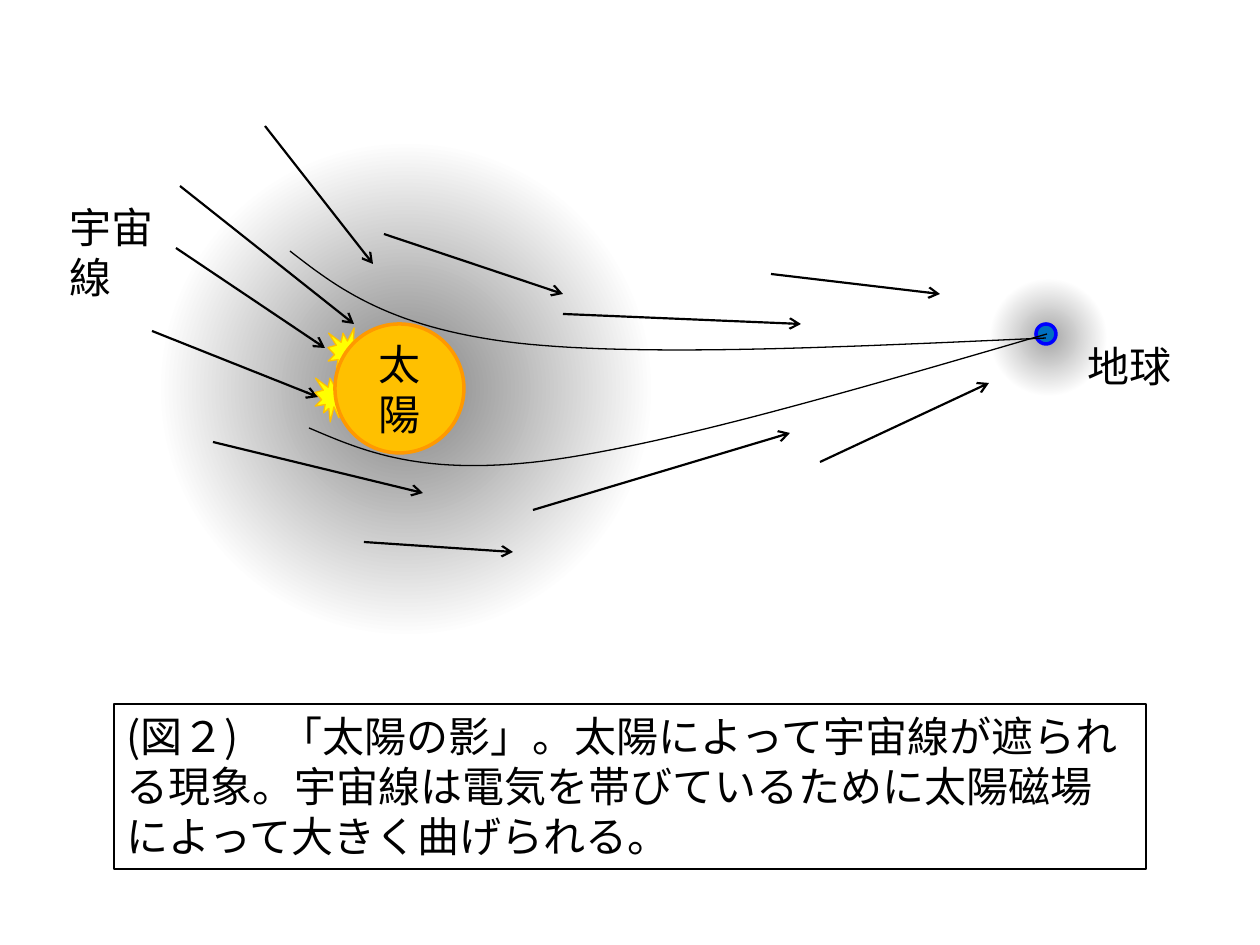
import pptx
import pptx.util
import pptx.dml.color
import pptx.enum.shapes
import pptx.enum.text
import pptx.oxml
import pptx.oxml.ns

PX = 914400 / 126
FONT = "Noto Sans CJK JP"
SHAPE = pptx.enum.shapes.MSO_SHAPE
COLORS = {
    "ink": "000000", "white": "FFFFFF",
    "earth": "0070C0", "earth_rim": "0000FF",
    "sun": "FFC000", "sun_rim": "FF9900",
    "burst": "FFFF00", "burst_rim": "FFC000",
    "earth_glow": "A6A6A6", "sun_glow": "808080",
}

# Boxes are left, top, width, height
GLOWS = [((987, 236, 123, 203), "earth_glow"), ((54, 37, 704, 704), "sun_glow")]
EARTH = (1036, 324, 20, 20)
SUN = (335, 324, 129, 129)
BURSTS = [(328, 328, 39, 49), (315, 373, 39, 49)]
# Start point, then two control points and an end point for each cubic segment
PATHS = [
    [(290, 251), (340, 290), (391, 328), (517, 343),
     (643, 357), (844, 347), (1046, 338)],
    [(309, 428), (365, 452), (422, 476), (544, 461),
     (668, 445), (858, 389), (1047, 334)],
]
ARROWS = [
    ((180, 186), (354, 324)), ((152, 331), (318, 397)),
    ((213, 442), (423, 493)), ((265, 126), (373, 264)),
    ((533, 510), (790, 433)), ((563, 314), (801, 324)),
    ((176, 248), (325, 348)), ((364, 542), (513, 552)),
    ((384, 234), (563, 294)), ((820, 462), (989, 383)),
    ((771, 274), (940, 294)),
]
# Text, box, right inset
LABELS = [("地球", (1075, 334, 111, 63), 13), ("宇宙線", (57, 195, 152, 63), 45)]
CAPTION = ("(図２)　「太陽の影」。太陽によって宇宙線が遮られる現象。"
           "宇宙線は電気を帯びているために太陽磁場によって大きく曲げられる。")
CAPTION_BOX = (114, 704, 1032, 165)


def emu(*values):
    return [pptx.util.Emu(round(v * PX)) for v in values]


def rgb(name):
    return pptx.dml.color.RGBColor.from_string(COLORS[name])


def xml(tag, body="", attrs=""):
    ns = pptx.oxml.ns.nsdecls("a")
    return pptx.oxml.parse_xml(f"<a:{tag} {ns} {attrs}>{body}</a:{tag}>")


def paint(sp, fill=None, line=None, width=0.75):
    sp.shadow.inherit = False
    if fill:
        sp.fill.solid()
        sp.fill.fore_color.rgb = rgb(fill)
    else:
        sp.fill.background()
    if line:
        sp.line.color.rgb = rgb(line)
        sp.line.width = pptx.util.Pt(width)
    else:
        sp.line.fill.background()


def add_shape(s, kind, box, fill=None, line=None, width=0.75):
    sp = s.shapes.add_shape(kind, *emu(*box))
    paint(sp, fill, line, width)
    return sp


def add_glow(s, box, color):
    sp = add_shape(s, SHAPE.OVAL, box, color)
    stops = "".join(
        f'<a:gs pos="{pos}"><a:srgbClr val="{COLORS[name]}"/></a:gs>'
        for pos, name in [(0, color), (50000, "white"), (100000, "white")])
    grad = xml("gradFill", f'<a:gsLst>{stops}</a:gsLst><a:path path="circle">'
               '<a:fillToRect l="50000" t="50000" r="50000" b="50000"/></a:path>')
    solid = sp._element.spPr.find(pptx.oxml.ns.qn("a:solidFill"))
    solid.getparent().replace(solid, grad)


def bezier(points, steps=30):
    """Points along a chain of cubic segments, after the first point."""
    for i in range(0, len(points) - 1, 3):
        segment = points[i:i + 4]
        for k in range(1, steps + 1):
            t = k / steps
            weights = ((1 - t) ** 3, 3 * t * (1 - t) ** 2, 3 * t * t * (1 - t), t ** 3)
            yield emu(*(sum(w * p[axis] for w, p in zip(weights, segment))
                        for axis in (0, 1)))


def add_path(s, points):
    builder = s.shapes.build_freeform(*emu(*points[0]))
    builder.add_line_segments(list(bezier(points)), close=False)
    paint(builder.convert_to_shape(), line="ink")


def add_arrow(s, start, end):
    straight = pptx.enum.shapes.MSO_CONNECTOR.STRAIGHT
    line = s.shapes.add_connector(straight, *emu(*start, *end))
    line.line.color.rgb = rgb("ink")
    line.line.width = pptx.util.Pt(1.25)
    line.line._get_or_add_ln().append(xml("tailEnd", attrs='type="arrow"'))
    line._element.spPr.append(xml("effectLst"))


def set_text(sp, text, align, anchor):
    tf = sp.text_frame
    tf.word_wrap = True
    tf.vertical_anchor = anchor
    tf.text = text
    p = tf.paragraphs[0]
    p.alignment = align
    r = p.runs[0]
    r.font.size = pptx.util.Pt(24)
    r.font.name = FONT
    r.font.color.rgb = rgb("ink")
    r._r.get_or_add_rPr().append(xml("ea", attrs=f'typeface="{FONT}"'))


def main():
    prs = pptx.Presentation()
    prs.slide_width, prs.slide_height = emu(1260, 945)
    s = prs.slides.add_slide(prs.slide_layouts[6])
    align, anchor = pptx.enum.text.PP_ALIGN, pptx.enum.text.MSO_ANCHOR

    for box, color in GLOWS:
        add_glow(s, box, color)
    add_shape(s, SHAPE.OVAL, EARTH, "earth", "earth_rim", 2)
    for points in PATHS:
        add_path(s, points)
    for start, end in ARROWS:
        add_arrow(s, start, end)
    for box in BURSTS:
        add_shape(s, SHAPE.EXPLOSION1, box, "burst", "burst_rim")
    for text, box, inset in LABELS:
        label = s.shapes.add_textbox(*emu(*box))
        set_text(label, text, align.LEFT, anchor.TOP)
        label.text_frame.margin_right = emu(inset)[0]
    sun = add_shape(s, SHAPE.OVAL, SUN, "sun", "sun_rim", 2)
    set_text(sun, "太陽", align.CENTER, anchor.MIDDLE)
    caption = add_shape(s, SHAPE.RECTANGLE, CAPTION_BOX, line="ink")
    set_text(caption, CAPTION, align.LEFT, anchor.TOP)

    prs.save("out.pptx")


if __name__ == "__main__":
    main()
